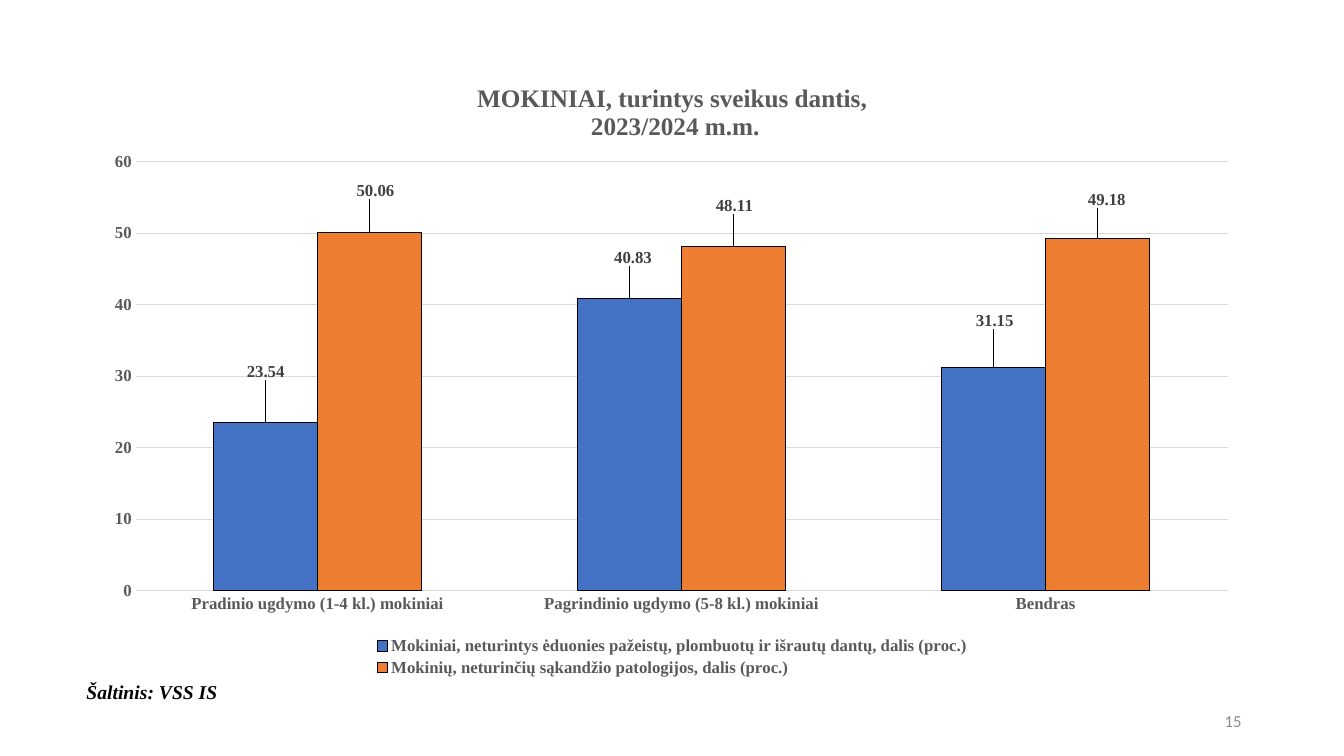
import pptx
import pptx.chart.data
import pptx.dml.color
import pptx.enum.chart
import pptx.enum.text
import pptx.oxml
import pptx.oxml.ns
import pptx.util
from pptx.util import Cm

TITLE = ["MOKINIAI, turintys sveikus dantis, ", "2023/2024 m.m."]
GROUPS = ["Pradinio ugdymo (1-4 kl.) mokiniai", "Pagrindinio ugdymo (5-8 kl.) mokiniai", "Bendras"]
SERIES = [
    {"name": "Mokiniai, neturintys ėduonies pažeistų, plombuotų ir išrautų dantų, dalis (proc.)",
     "values": [23.54, 40.83, 31.15], "color": "blue",
     "shifts": [(0, -6.1), (0.3, -4.5), (0.1, -5.5)]},
    {"name": "Mokinių, neturinčių sąkandžio patologijos, dalis (proc.)",
     "values": [50.06, 48.11, 49.18], "color": "orange",
     "shifts": [(0.5, -4.7), (0.1, -4.5), (0.8, -4.3)]},
]
SOURCE = "Šaltinis: VSS IS"
PAGE = "15"
COLORS = {"blue": "4472C4", "orange": "ED7D31", "black": "000000", "text": "595959",
          "label": "404040", "grid": "D9D9D9", "page": "8C8C8C"}
SERIF = "Times New Roman"
PLOT = {"x": 3.7, "y": 16.6, "w": 94.2, "h": 69}
LEGEND = {"x": 24, "y": 92.5, "w": 52, "h": 7.5}
HEAD = {"x": 32.9, "y": 3.6}


def tint(name):
    return pptx.dml.color.RGBColor.from_string(COLORS[name])


def style(font, size=12, color="text", face=SERIF, bold=True, italic=False):
    font.size = pptx.util.Pt(size)
    font.name = face
    font.bold = bold
    font.italic = italic
    font.color.rgb = tint(color)


def write(frame, lines, align=None, **form):
    for i, line in enumerate(lines):
        para = frame.paragraphs[0] if i == 0 else frame.add_paragraph()
        para.alignment = align
        run = para.add_run()
        run.text = line
        style(run.font, **form)


def place(node, index, sides, mode="edge", inner=False):
    for old in node.findall(pptx.oxml.ns.qn("c:layout")):
        node.remove(old)
    parts = '<c:layoutTarget val="inner"/>' if inner else ""
    if mode == "edge":
        parts += '<c:xMode val="edge"/><c:yMode val="edge"/>'
    parts += "".join(f'<c:{key} val="{val / 100:.4f}"/>' for key, val in sides.items())
    node.insert(index, pptx.oxml.parse_xml(
        f'<c:layout {pptx.oxml.ns.nsdecls("c")}><c:manualLayout>{parts}</c:manualLayout></c:layout>'))


def draw_chart(slide):
    kinds = pptx.enum.chart
    data = pptx.chart.data.CategoryChartData()
    data.categories = GROUPS
    for item in SERIES:
        data.add_series(item["name"], item["values"])
    chart = slide.shapes.add_chart(kinds.XL_CHART_TYPE.COLUMN_CLUSTERED,
                                   Cm(2.34), Cm(1.47), Cm(29.21), Cm(15.67), data).chart
    chart.font.name = "Calibri"
    chart.font.size = pptx.util.Pt(10)
    chart.has_title = True
    write(chart.chart_title.text_frame, TITLE, size=18, align=pptx.enum.text.PP_ALIGN.CENTER)
    place(chart.chart_title._element, 1, HEAD)

    chart.has_legend = True
    chart.legend.position = kinds.XL_LEGEND_POSITION.BOTTOM
    chart.legend.include_in_layout = False
    style(chart.legend.font)
    place(chart.legend._element, 1, LEGEND)

    for axis in (chart.category_axis, chart.value_axis):
        axis.major_tick_mark = kinds.XL_TICK_MARK.NONE
        axis.minor_tick_mark = kinds.XL_TICK_MARK.NONE
        axis.format.line.fill.background()
        style(axis.tick_labels.font)
    scale = chart.value_axis
    scale.minimum_scale, scale.maximum_scale, scale.major_unit = 0, 60, 10
    scale.major_gridlines.format.line.color.rgb = tint("grid")
    scale.major_gridlines.format.line.width = pptx.util.Pt(0.75)

    plot = chart.plots[0]
    plot.gap_width, plot.overlap, plot.vary_by_categories = 150, 0, False
    place(chart._chartSpace.chart.plotArea, 0, PLOT, inner=True)
    for bars, item in zip(plot.series, SERIES):
        bars.format.fill.solid()
        bars.format.fill.fore_color.rgb = tint(item["color"])
        bars.format.line.color.rgb = tint("black")
        bars.format.line.width = pptx.util.Pt(0.75)
        bars.data_labels.show_value = True
        style(bars.data_labels.font, color="label")
        for i, (x, y) in enumerate(item["shifts"]):
            label = bars.points[i].data_label
            style(label.font, color="label")
            label.position = kinds.XL_LABEL_POSITION.OUTSIDE_END
            place(label._dLbl, 1, {"x": x, "y": y}, mode="factor")


def add_box(slide, left, top, width, height, wrap):
    frame = slide.shapes.add_textbox(Cm(left), Cm(top), Cm(width), Cm(height)).text_frame
    frame.word_wrap = wrap
    return frame


def main():
    """Build the slide about pupils with healthy teeth."""
    deck = pptx.Presentation()
    deck.slide_width, deck.slide_height = Cm(33.87), Cm(19.05)
    slide = deck.slides.add_slide(deck.slide_layouts[6])
    draw_chart(slide)
    note = add_box(slide, 1.93, 17, 3.84, 0.86, False)
    note.auto_size = pptx.enum.text.MSO_AUTO_SIZE.SHAPE_TO_FIT_TEXT
    write(note, [SOURCE], size=14, color="black", italic=True)
    page = add_box(slide, 23.92, 17.66, 7.62, 1.01, True)
    page.vertical_anchor = pptx.enum.text.MSO_ANCHOR.MIDDLE
    write(page, [PAGE], align=pptx.enum.text.PP_ALIGN.RIGHT, color="page", face="Calibri", bold=False)
    deck.save("out.pptx")


if __name__ == "__main__":
    main()
